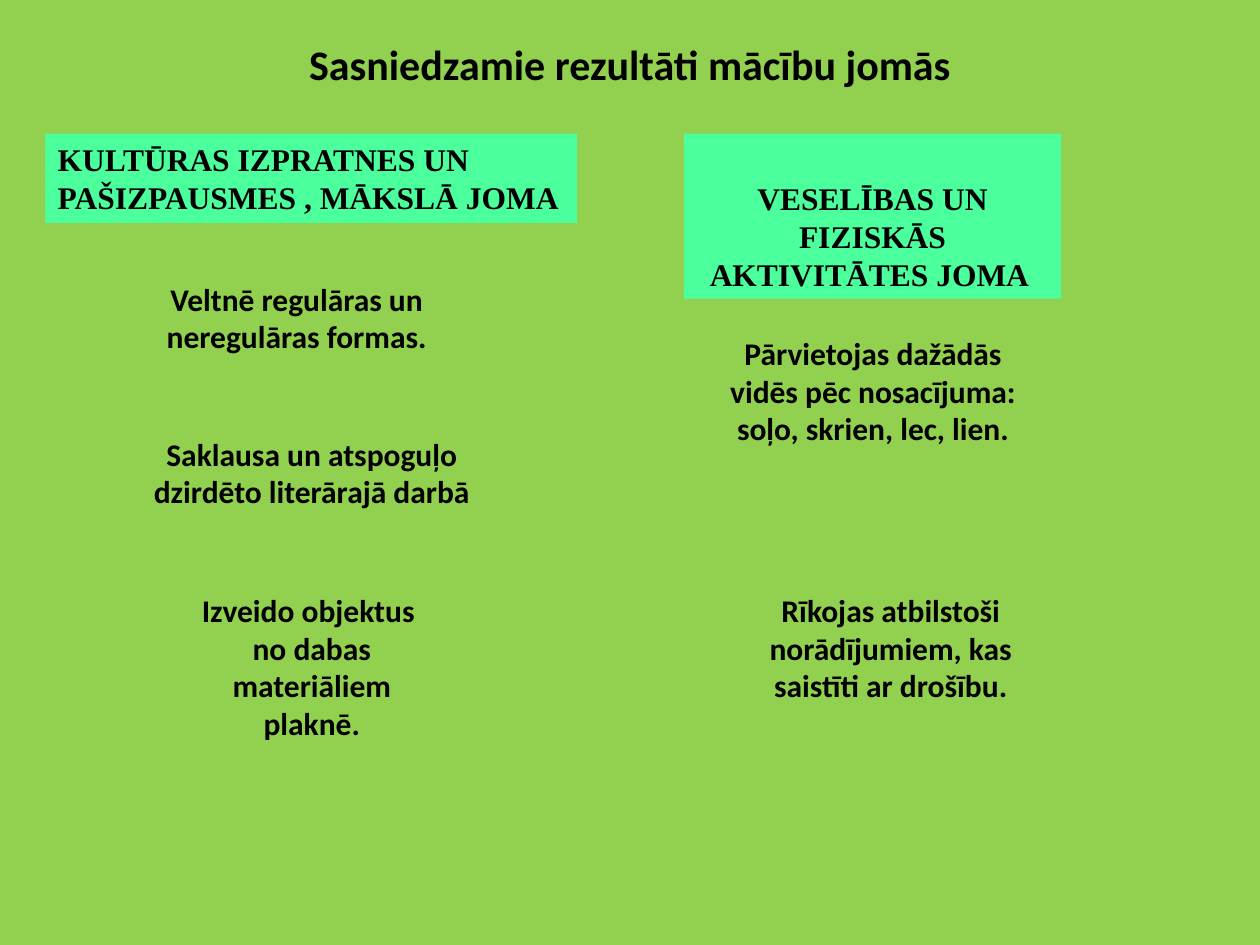
from dataclasses import dataclass

from pptx import Presentation
from pptx.dml.color import RGBColor
from pptx.enum.shapes import MSO_SHAPE
from pptx.enum.text import MSO_ANCHOR, PP_ALIGN
from pptx.util import Inches, Pt

RECT = MSO_SHAPE.RECTANGLE
LEFT, MID = PP_ALIGN.LEFT, PP_ALIGN.CENTER
TOP, LOW = MSO_ANCHOR.TOP, MSO_ANCHOR.BOTTOM
WIDE, HIGH = Inches(10), Inches(7.5)
COLS, ROWS = 100, 75
HEAD_ROW, LAST_ROW = 10.6, 46.4
TWO, THREE, FOUR = 7.1, 10.1, 13.1


@dataclass(frozen=True)
class Theme:
    back: RGBColor = RGBColor(0x92, 0xD0, 0x50)
    band: RGBColor = RGBColor(0x4B, 0xFF, 0x9C)
    ink: RGBColor = RGBColor(0, 0, 0)
    sans: str = "Calibri"
    serif: str = "Times New Roman"
    title: Pt = Pt(24)
    body: Pt = Pt(18)


THEME = Theme()


def place(col, row, wide, high):
    across, down = WIDE / COLS, HIGH / ROWS
    return [round(n) for n in (col * across, row * down, wide * across, high * down)]


def style(item, values):
    for name, value in values.items():
        setattr(item, name, value)


def write(shape, lines, face, size, align=MID, anchor=TOP):
    frame = shape.text_frame
    style(frame, {"word_wrap": True, "vertical_anchor": anchor})
    frame.text = "\n".join(lines)
    for para in frame.paragraphs:
        para.alignment = align
        style(para.font, {"name": face, "size": size, "bold": True})
        para.font.color.rgb = THEME.ink


def add_note(slide, spot, *lines, size=THEME.body):
    box = slide.shapes.add_textbox(*place(*spot))
    write(box, lines, THEME.sans, size)


def add_band(slide, spot, text, align, anchor):
    band = slide.shapes.add_shape(RECT, *place(*spot))
    band.shadow.inherit = False
    band.fill.solid()
    band.fill.fore_color.rgb = THEME.band
    band.line.fill.background()
    write(band, [text], THEME.serif, THEME.body, align, anchor)


def main():
    deck = Presentation()
    style(deck, {"slide_width": WIDE, "slide_height": HIGH})
    slide = deck.slides.add_slide(deck.slide_layouts[6])
    fill = slide.background.fill
    fill.solid()
    fill.fore_color.rgb = THEME.back

    add_note(slide, (14.5, 2.6, 71, 5), "Sasniedzamie rezultāti mācību jomās",
             size=THEME.title)

    add_band(slide, (3.6, HEAD_ROW, 42.2, TWO),
             "KULTŪRAS IZPRATNES UN PAŠIZPAUSMES , MĀKSLĀ JOMA", LEFT, TOP)
    add_note(slide, (11, 21.7, 25.1, TWO), "Veltnē regulāras un neregulāras formas.")
    add_note(slide, (10.8, 34, 27.9, TWO),
             "Saklausa un atspoguļo dzirdēto literārajā darbā")
    add_note(slide, (14, LAST_ROW, 21.5, FOUR),
             "Izveido objektus ", "no dabas materiāliem plaknē.")

    add_band(slide, (54.3, HEAD_ROW, 29.9, FOUR),
             "VESELĪBAS UN FIZISKĀS AKTIVITĀTES JOMA ", MID, LOW)
    add_note(slide, (55.8, 26, 27, THREE),
             "Pārvietojas dažādās vidēs pēc nosacījuma: soļo, skrien, lec, lien.")
    add_note(slide, (58.6, LAST_ROW, 24.2, THREE),
             "Rīkojas atbilstoši norādījumiem, kas saistīti ar drošību.")

    deck.save("out.pptx")


if __name__ == "__main__":
    main()
